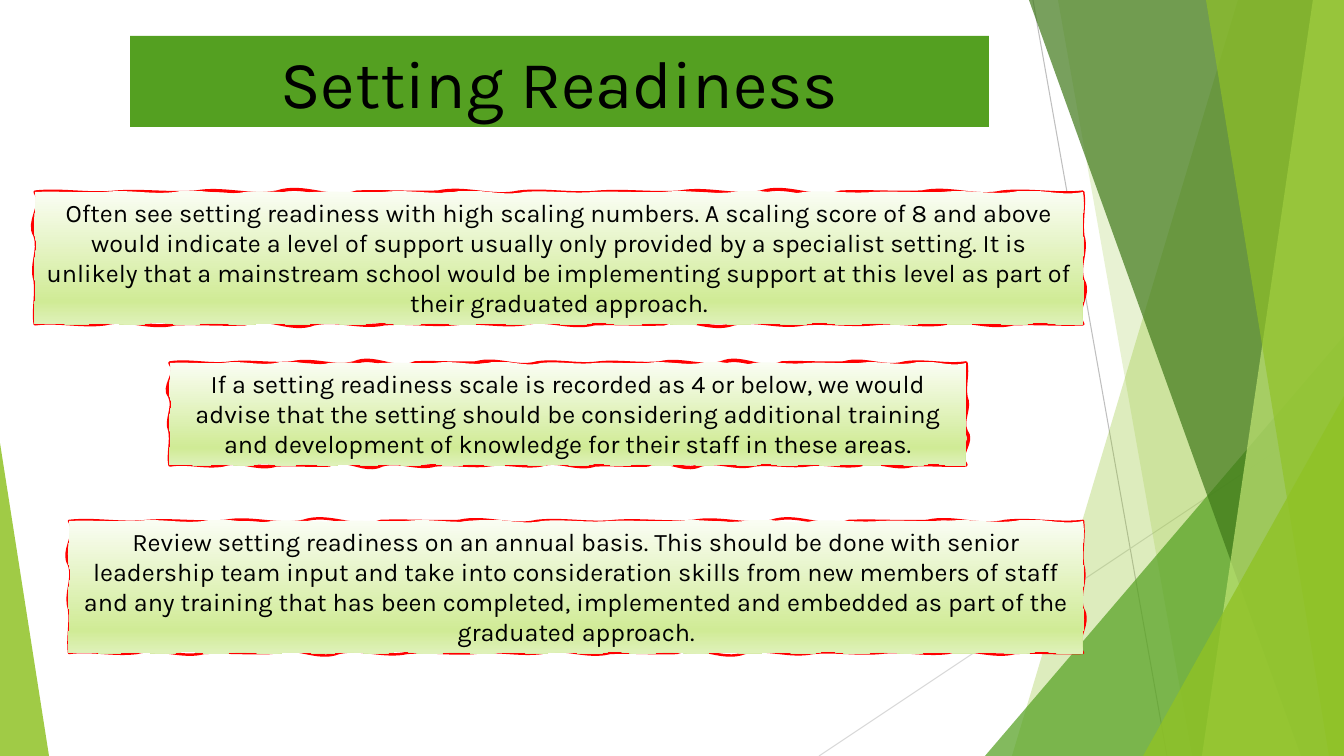
"""Build the Setting Readiness slide with its green facets and sketched boxes."""
from itertools import cycle

from lxml.etree import SubElement
from pptx import Presentation
from pptx.dml.color import RGBColor
from pptx.enum.shapes import MSO_CONNECTOR as Connector, MSO_SHAPE as Preset
from pptx.enum.text import MSO_ANCHOR as Anchor, MSO_AUTO_SIZE as AutoSize, PP_ALIGN as Align
from pptx.oxml import parse_xml
from pptx.oxml.ns import nsdecls, qn
from pptx.util import Emu, Pt

SCALE = 914400 / 100.8
WIDTH, HEIGHT = 1344, 756

BLACK = RGBColor(0x00, 0x00, 0x00)
RED = RGBColor(0xFF, 0x00, 0x00)
GREEN = RGBColor(0x54, 0xA0, 0x21)
LIME = RGBColor(0x90, 0xC2, 0x26)
FOREST = RGBColor(0x3F, 0x78, 0x19)
PALE = RGBColor(0xC0, 0xE4, 0x74)
GREY = RGBColor(0xBF, 0xBF, 0xBF)
LIGHT_GREY = RGBColor(0xD9, 0xD9, 0xD9)
FADE = [(0, RGBColor(0xFA, 0xFD, 0xF3)), (0.83, RGBColor(0xD0, 0xEB, 0x96)),
        (1, RGBColor(0xDF, 0xF1, 0xB9))]

RAYS = [((1033, 0, 1167, HEIGHT), GREY), ((WIDTH, 406, 819, HEIGHT), LIGHT_GREY)]
BACK_FACETS = [(1238, 1012, LIME, 30), (1058, 1192, LIME, 20)]
FRONT_FACETS = [(1029, 1301, FOREST, 70), (1313, 1202, PALE, 70), (1206, 1329, LIME, 65)]
LOW_WEDGE = ((985, 336, 359, 420), 1, GREEN, 72)
EDGE_WEDGES = [((1143, 396, 201, 360), 1, LIME, 80), ((0, 443, 49, 313), 0, LIME, 85)]

OUTLINE_WAVES = (13, 3, 15, 3)
FILL_WAVES = (15, 3, 19, 3)
OUTLINE_SWELLS = (3, 2, 5, 9, 1, 6)
FILL_SWELLS = (1, 3, 5, 2)

ADVICE = [
    ((35, 192, 1048, 132), 2.25,
     "Often see setting readiness with high scaling numbers. A scaling score of 8 and above "
     "would indicate a level of support usually only provided by a specialist setting. It is "
     "unlikely that a mainstream school would be implementing support at this level as part of "
     "their graduated approach."),
    ((170, 363, 796, 102), 2.5,
     "If a setting readiness scale is recorded as 4 or below, we would advise that the setting "
     "should be considering additional training and development of knowledge for their staff "
     "in these areas."),
    ((69, 521, 1014, 132), 1.75,
     "Review setting readiness on an annual basis. This should be done with senior leadership "
     "team input and take into consideration skills from new members of staff and any training "
     "that has been completed, implemented and embedded as part of the graduated approach."),
]


def px(*lengths):
    """Turn pixel lengths into EMU."""
    return [Emu(round(length * SCALE)) for length in lengths]


def apply(target, formats):
    """Set each attribute named in a dict of format values."""
    for attribute, value in formats.items():
        setattr(target, attribute, value)


def write(shape, wording, size, anchor):
    """Put one centred paragraph into a shape."""
    frame = shape.text_frame
    apply(frame, {"text": wording, "word_wrap": True, "auto_size": AutoSize.NONE,
                  "vertical_anchor": anchor})
    paragraph = frame.paragraphs[0]
    paragraph.alignment = Align.CENTER
    apply(paragraph.runs[0].font, {"name": "Karla", "size": Pt(size)})
    paragraph.runs[0].font.color.rgb = BLACK


def tint(shape, color, opacity):
    """Give a facet a see-through fill and no line."""
    shape.shadow.inherit = False
    shape.fill.solid()
    shape.fill.fore_color.rgb = color
    shape.line.fill.background()
    hue = shape.fill._xPr.find(".//" + qn("a:srgbClr"))
    SubElement(hue, qn("a:alpha"), val=str(opacity * 1000))


def outline(slide, corners):
    """Draw a closed outline through corners given in pixels."""
    builder = slide.shapes.build_freeform(*corners[0], scale=SCALE)
    builder.add_line_segments(corners[1:], close=True)
    return builder.convert_to_shape()


def add_ray(slide, ends, color):
    """Draw a thin background line."""
    ray = slide.shapes.add_connector(Connector.STRAIGHT, *px(*ends))
    ray.line.color.rgb = color
    ray.line.width = Pt(0.75)
    SubElement(ray._element.spPr, qn("a:effectLst"))


def add_facet(slide, top, bottom, color, opacity):
    """Draw a full-height facet that ends at the right edge."""
    corners = [(top, 0), (WIDTH, 0), (WIDTH, HEIGHT), (bottom, HEIGHT)]
    tint(outline(slide, corners), color, opacity)


def add_wedge(slide, bounds, apex, color, opacity):
    """Draw a right-angled wedge with its apex on one side."""
    wedge = slide.shapes.add_shape(Preset.ISOSCELES_TRIANGLE, *px(*bounds))
    wedge.adjustments[0] = apex
    tint(wedge, color, opacity)


def wavy_path(width, height, waves, swells, switch):
    """Return a path whose sides swell out and in around a rectangle."""
    corners = [(0, 0), (width, 0), (width, height), (0, height), (0, 0)]
    swell = cycle(swells)
    curves = []
    for (x, y), (end_x, end_y), count in zip(corners, corners[1:], waves):
        run, rise = end_x - x, end_y - y
        length = abs(run + rise)
        out_x, out_y = rise / length, -run / length
        for wave in range(count):
            bulge = next(swell)
            bends = [(1 / 3, bulge), (2 / 3, -bulge), (1, 0)]
            points = "".join(
                f'<a:pt x="{round(x + run * (wave + along) / count + out_x * bend)}" '
                f'y="{round(y + rise * (wave + along) / count + out_y * bend)}"/>'
                for along, bend in bends)
            curves.append(f"<a:cubicBezTo>{points}</a:cubicBezTo>")
    return parse_xml(
        f'<a:path {nsdecls("a")} w="{width}" h="{height}" {switch}>'
        f'<a:moveTo><a:pt x="0" y="0"/></a:moveTo>{"".join(curves)}<a:close/></a:path>')


def fade(shape):
    """Fill a shape with the pale green gradient from top to bottom."""
    shape.fill.gradient()
    shape.fill.gradient_angle = 270
    stops = shape.fill._xPr.find(".//" + qn("a:gsLst"))
    for stop in list(stops):
        stops.remove(stop)
    for position, color in FADE:
        stop = SubElement(stops, qn("a:gs"), pos=str(round(position * 100000)))
        SubElement(stop, qn("a:srgbClr"), val=str(color))


def add_advice(slide, bounds, weight, wording):
    """Add a sketched box with a piece of advice."""
    left, top, width, height = bounds
    right, bottom = left + width, top + height
    box = outline(slide, [(left, top), (right, top), (right, bottom), (left, bottom)])
    box.shadow.inherit = False
    paths = box._element.spPr.find(".//" + qn("a:pathLst"))
    paths.remove(paths[0])
    paths.append(wavy_path(width, height, OUTLINE_WAVES, OUTLINE_SWELLS, 'fill="none"'))
    paths.append(wavy_path(width, height, FILL_WAVES, FILL_SWELLS, 'stroke="0"'))
    fade(box)
    box.line.color.rgb = RED
    box.line.width = Pt(weight)
    write(box, wording, 18, Anchor.TOP)


def add_heading(slide, wording):
    """Place the title on its green band."""
    heading = slide.shapes.title
    apply(heading, dict(zip(("left", "top", "width", "height"), px(130, 36, 859, 91))))
    heading.fill.solid()
    heading.fill.fore_color.rgb = GREEN
    write(heading, wording, 48, Anchor.MIDDLE)


def main():
    """Build and save the slide."""
    deck = Presentation()
    deck.slide_width, deck.slide_height = px(WIDTH, HEIGHT)
    slide = deck.slides.add_slide(deck.slide_layouts.get_by_name("Title Only"))
    for ray in RAYS:
        add_ray(slide, *ray)
    for facet in BACK_FACETS:
        add_facet(slide, *facet)
    add_wedge(slide, *LOW_WEDGE)
    for facet in FRONT_FACETS:
        add_facet(slide, *facet)
    for wedge in EDGE_WEDGES:
        add_wedge(slide, *wedge)
    add_heading(slide, "Setting Readiness")
    for advice in ADVICE:
        add_advice(slide, *advice)
    deck.save("out.pptx")


if __name__ == "__main__":
    main()
